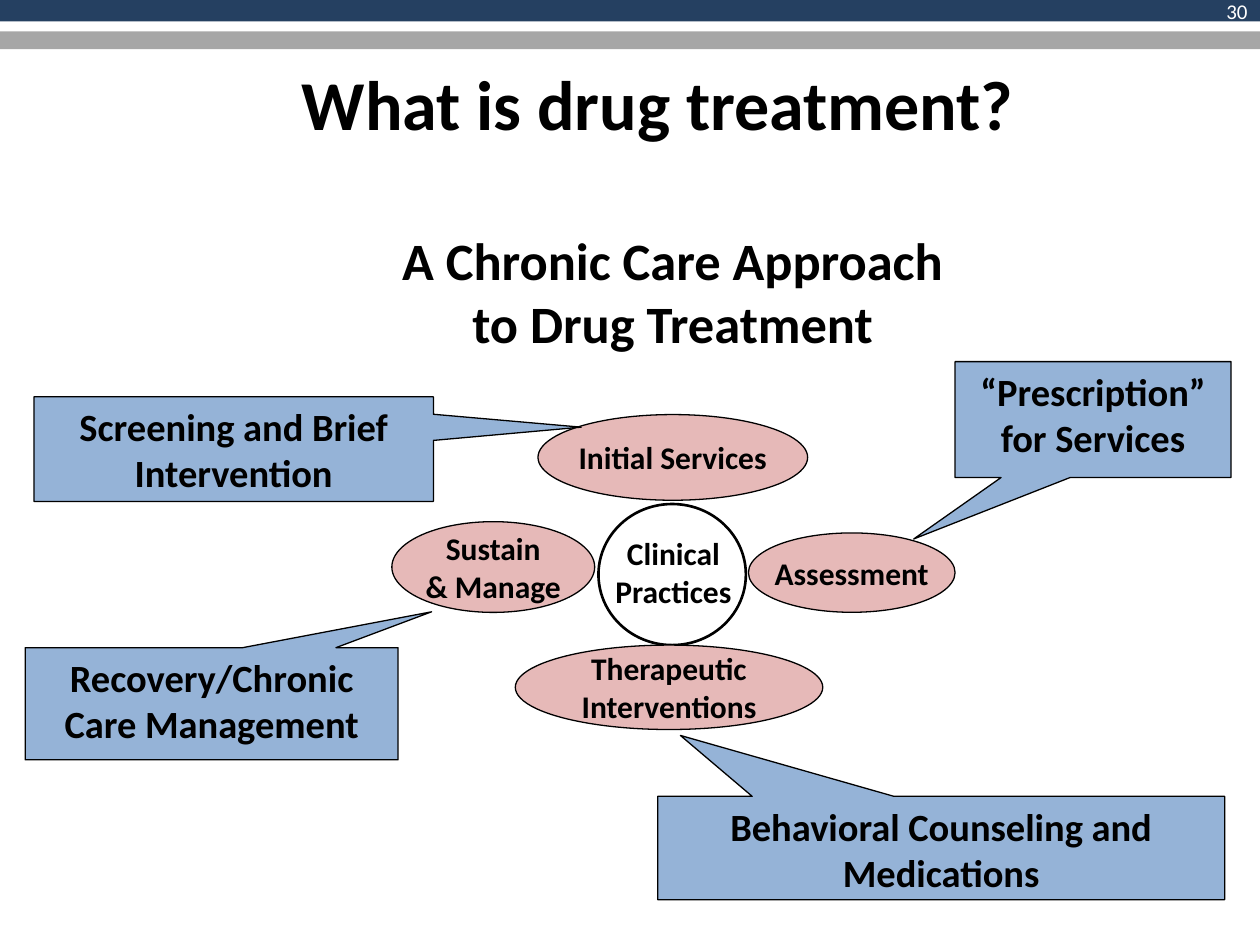
"""Build the slide on a chronic care approach to drug treatment."""
from pptx import Presentation
from pptx.dml.color import RGBColor
from pptx.enum.shapes import MSO_SHAPE as Shape
from pptx.enum.text import MSO_ANCHOR as Anchor, MSO_AUTO_SIZE as AutoSize, PP_ALIGN as Align
from pptx.util import Inches, Pt

deck = Presentation()
deck.slide_width, deck.slide_height = Inches(10), Inches(7.5)
COLUMN, ROW = deck.slide_width / 100, deck.slide_height / 75
BLACK, WHITE, NAVY, GREY, PINK, BLUE = "000000", "FFFFFF", "254061", "A6A6A6", "E6B9B8", "95B3D7"
page = deck.slides.add_slide(deck.slide_layouts[5])


def add_block(kind, area, fill, line_width=0):
    """Add a preset shape; area is left, top, width, height in columns and rows."""
    left, top, width, height = area
    block = page.shapes.add_shape(
        kind, int(left * COLUMN), int(top * ROW), int(width * COLUMN), int(height * ROW))
    block.shadow.inherit = False
    if fill:
        block.fill.solid()
        block.fill.fore_color.rgb = RGBColor.from_string(fill)
    else:
        block.fill.background()
    if line_width:
        block.line.color.rgb = RGBColor.from_string(BLACK)
        block.line.width = Pt(line_width)
    else:
        block.line.fill.background()
    return block


def write(box, lines, size, color=BLACK, bold=True, align=Align.CENTER, anchor=Anchor.MIDDLE, wrap=False):
    """Fill a box with one paragraph per line of text."""
    frame = box.text_frame
    frame.word_wrap, frame.auto_size, frame.vertical_anchor = wrap, AutoSize.NONE, anchor
    for number, line in enumerate(lines):
        para = frame.add_paragraph() if number else frame.paragraphs[0]
        para.alignment = align
        span = para.add_run()
        span.text = line
        span.font.name, span.font.size, span.font.bold = "Calibri", Pt(size), bold
        span.font.color.rgb = RGBColor.from_string(color)


add_block(Shape.RECTANGLE, (0, 0, 100, 1.7), NAVY)
add_block(Shape.RECTANGLE, (0, 2.5, 100, 1.4), GREY)

hub = add_block(Shape.OVAL, (47.5, 40, 11.7, 11.2), None, 1.5)
hub_label = page.shapes.add_textbox(
    int(47.5 * COLUMN), int(41.9 * ROW), int(11.9 * COLUMN), int(7.1 * ROW))
write(hub_label, ["Clinical", "Practices"], 18, anchor=Anchor.TOP)

stages = [
    ((42.7, 32.9, 21.4, 6.8), ["Initial Services"]),
    ((31.1, 41.4, 16.1, 7.2), ["Sustain", "& Manage"]),
    ((40.9, 51.2, 24.4, 6.7), ["Therapeutic", "Interventions"]),
    ((59.4, 42.3, 16.4, 6.3), ["Assessment"]),
]
for area, lines in stages:
    write(add_block(Shape.OVAL, area, PINK, 0.75), lines, 18)

callouts = [
    ((75.8, 28.7, 21.9, 9.2), (-0.65, 1.03), "“Prescription” for Services"),
    ((52.2, 63.2, 45, 8.2), (-0.46, -1.09), "Behavioral Counseling and Medications"),
    ((2, 51.4, 29.6, 8.9), (0.59, -0.82), "Recovery/Chronic Care Management"),
    ((2.7, 31.5, 31.7, 8.3), (0.87, -0.21), "Screening and Brief Intervention"),
]
for area, tip, line in callouts:
    callout = add_block(Shape.RECTANGULAR_CALLOUT, area, BLUE, 0.75)
    callout.adjustments[0], callout.adjustments[1] = tip
    write(callout, [line], 22, anchor=Anchor.TOP, wrap=True)

title = page.shapes.title
title.left, title.top = int(9.7 * COLUMN), 0
title.width, title.height = int(85 * COLUMN), int(16.3 * ROW)
write(title, ["What is drug treatment?"], 40, wrap=True)

subtitle = page.shapes.add_textbox(
    int(29.7 * COLUMN), int(17.6 * ROW), int(47.4 * COLUMN), int(11.1 * ROW))
write(subtitle, ["A Chronic Care Approach", "to Drug Treatment"], 30, anchor=Anchor.TOP)

page_number = page.shapes.add_textbox(
    int(76.7 * COLUMN), 0, int(23.3 * COLUMN), int(1.7 * ROW))
page_number.text_frame.margin_top = page_number.text_frame.margin_bottom = 0
write(page_number, ["30"], 12, WHITE, bold=False, align=Align.RIGHT, wrap=True)

deck.save("out.pptx")
